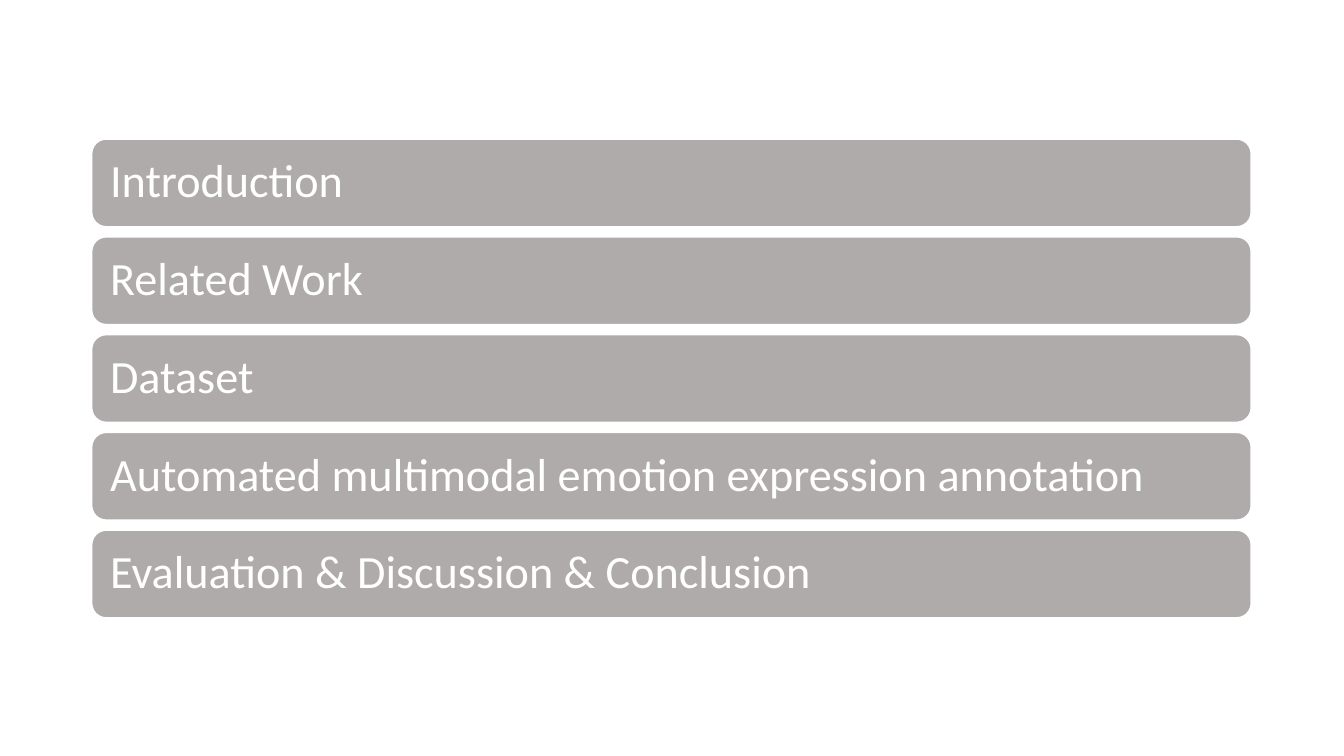
from dataclasses import dataclass

from pptx import Presentation
from pptx import util as u
from pptx.dml.color import RGBColor
from pptx.enum import shapes, text
from pptx.slide import Slide
from pptx.text.text import TextFrame


@dataclass(frozen=True)
class Theme:
    bar: RGBColor = RGBColor(0xAF, 0xAB, 0xAB)
    white: RGBColor = RGBColor(0xFF, 0xFF, 0xFF)
    font: str = "Calibri"
    size: int = 33


@dataclass(frozen=True)
class AgendaBar:
    label: str
    top: float


THEME = Theme()
LEFT, TOP, WIDTH, HEIGHT, PITCH = 0.91, 1.38, 11.5, 0.87, 0.97
TOPICS = [
    "Introduction",
    "Related Work",
    "Dataset",
    "Automated multimodal emotion expression annotation",
    "Evaluation & Discussion & Conclusion",
]


def write(tf: TextFrame, content: str, *, size: float, color: RGBColor,
          inset: float, spacing: float) -> None:
    tf.word_wrap = True
    tf.vertical_anchor = text.MSO_ANCHOR.MIDDLE
    tf.margin_left = tf.margin_right = u.Inches(inset)
    tf.margin_top = tf.margin_bottom = u.Inches(inset)
    p = tf.paragraphs[0]
    p.alignment = text.PP_ALIGN.LEFT
    p.line_spacing = spacing
    r = p.add_run()
    r.text = content
    r.font.name = THEME.font
    r.font.size = u.Pt(size)
    r.font.color.rgb = color


def draw_bar(s: Slide, bar: AgendaBar) -> None:
    sp = s.shapes.add_shape(
        shapes.MSO_SHAPE.ROUNDED_RECTANGLE,
        u.Inches(LEFT), u.Inches(bar.top), u.Inches(WIDTH), u.Inches(HEIGHT))
    sp.shadow.inherit = False
    sp.fill.solid()
    sp.fill.fore_color.rgb = THEME.bar
    sp.line.color.rgb = THEME.white
    sp.line.width = u.Pt(1)
    write(sp.text_frame, bar.label, size=THEME.size, color=THEME.white,
          inset=0.14, spacing=0.9)


def main() -> None:
    prs = Presentation()
    prs.slide_width, prs.slide_height = u.Inches(13.33), u.Inches(7.5)
    s = prs.slides.add_slide(prs.slide_layouts[6])
    for i, topic in enumerate(TOPICS):
        draw_bar(s, AgendaBar(topic, TOP + i * PITCH))
    prs.save("out.pptx")


if __name__ == "__main__":
    main()
